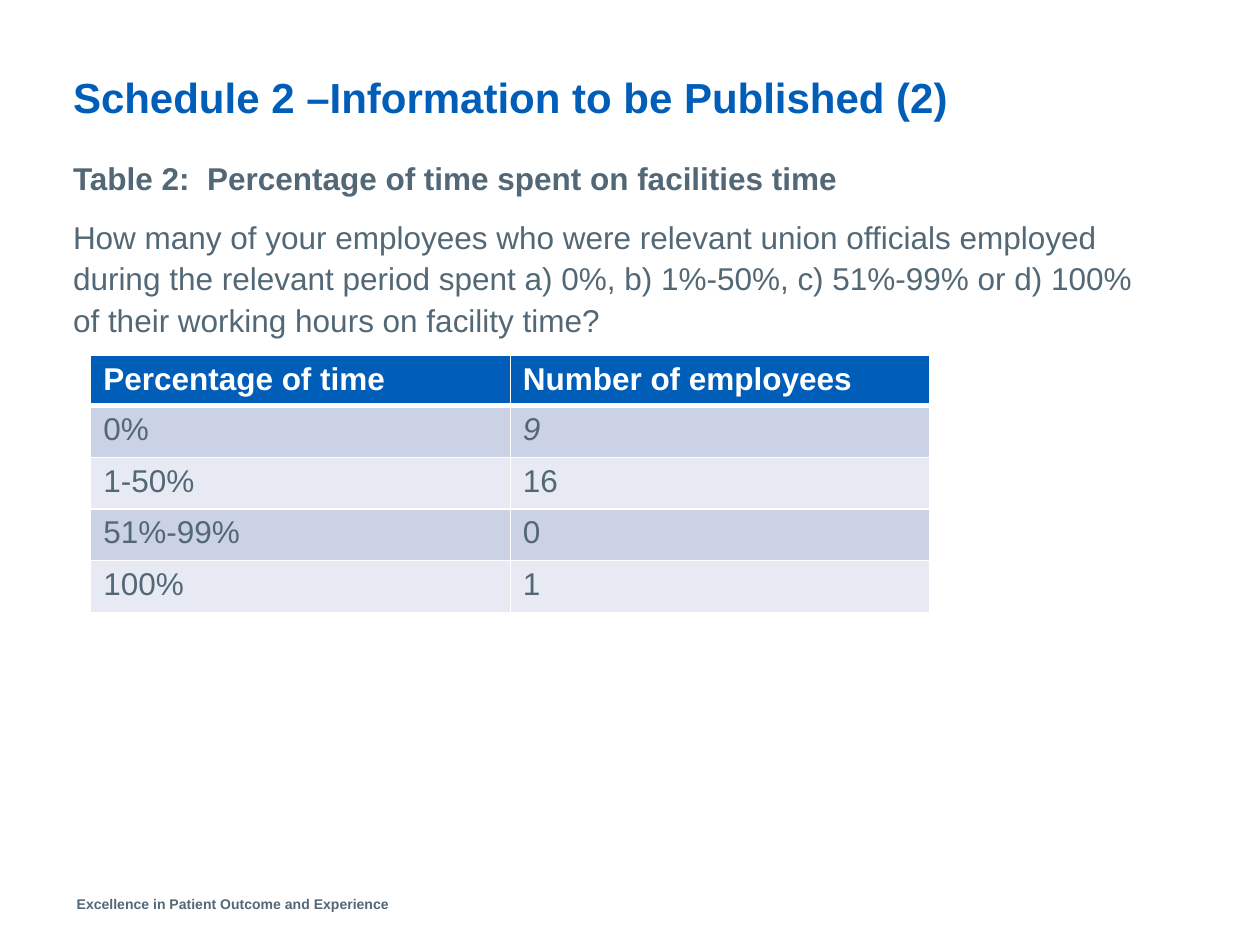
from pptx import Presentation
from pptx.dml.color import RGBColor
from pptx.enum.text import MSO_ANCHOR
from pptx.oxml import parse_xml
from pptx.oxml.ns import nsdecls
from pptx.util import Inches, Pt

THEME = {
    "font": "Arial",
    "blue": "005EB8", "grey": "536876", "white": "FFFFFF",
    "bands": ("CCD2E6", "E7EAF3"),
    "title": 24, "body": 18, "footer": 8,
}
LEFT = 0.58
COL_W, HEAD_H, ROW_H = 3.33, 0.37, 0.41


def write(p, text, size, color, line=None, before=None, **font):
    r = p.add_run()
    r.text = text
    r.font.color.rgb = RGBColor.from_string(THEME[color])
    for key, value in {"name": THEME["font"], "size": Pt(THEME[size]), **font}.items():
        setattr(r.font, key, value)
    p.line_spacing = line
    p.space_before = before


def text_frame(left, top, width, height, **fmt):
    sp = s.shapes.add_textbox(*map(Inches, (left, top, width, height)))
    for key, value in {"word_wrap": True, **fmt}.items():
        setattr(sp.text_frame, key, value)
    return sp.text_frame


prs = Presentation()
prs.slide_width, prs.slide_height = Inches(10), Inches(7.5)
s = prs.slides.add_slide(prs.slide_layouts[6])
flush = dict.fromkeys(("margin_left", "margin_top", "margin_right", "margin_bottom"), 0)

# Footer
tf = text_frame(0.51, 7.06, 4.02, 0.24)
write(tf.paragraphs[0], "Excellence in Patient Outcome and Experience", "footer", "grey", bold=True)

# Table heading and question
tf = text_frame(LEFT, 1.23, 8.43, 4.02, **flush)
write(tf.paragraphs[0], "Table 2:  Percentage of time spent on facilities time",
      "body", "grey", line=1.1, bold=True)
write(tf.add_paragraph(),
      "How many of your employees who were relevant union officials employed during the "
      "relevant period spent a) 0%, b) 1%-50%, c) 51%-99% or d) 100% of their working "
      "hours on facility time?", "body", "grey", line=1.1, before=Pt(10))

# Title
tf = text_frame(LEFT, 0.52, 8.27, 0.45, vertical_anchor=MSO_ANCHOR.BOTTOM, **flush)
write(tf.paragraphs[0], "Schedule 2 –Information to be Published (2)",
      "title", "blue", line=0.9, bold=True)

# Facility time table
rows = [
    ("Percentage of time", "Number of employees"),
    ("0%", "9"),
    ("1-50%", "16"),
    ("51%-99%", "0"),
    ("100%", "1"),
]
table = s.shapes.add_table(
    len(rows), 2, Inches(0.72), Inches(2.82),
    Inches(2 * COL_W), Inches(HEAD_H + ROW_H * (len(rows) - 1))).table
for col in table.columns:
    col.width = Inches(COL_W)

for i, values in enumerate(rows):
    head = i == 0
    table.rows[i].height = Inches(HEAD_H if head else ROW_H)
    fill = THEME["blue"] if head else THEME["bands"][(i - 1) % 2]
    for j, value in enumerate(values):
        cell = table.cell(i, j)
        write(cell.text_frame.paragraphs[0], value, "body", "white" if head else "grey",
              bold=head, italic=(i, j) == (1, 1))
        cell.fill.solid()
        cell.fill.fore_color.rgb = RGBColor.from_string(fill)
        # White rules, thicker below the header; borders precede the fill
        weights = {"lnL": 1, "lnR": 1, "lnT": 3 if i == 1 else 1, "lnB": 3 if head else 1}
        for k, (tag, weight) in enumerate(weights.items()):
            cell._tc.get_or_add_tcPr().insert(k, parse_xml(
                f'<a:{tag} {nsdecls("a")} w="{Pt(weight)}"><a:solidFill>'
                f'<a:srgbClr val="{THEME["white"]}"/></a:solidFill></a:{tag}>'))

prs.save("out.pptx")
